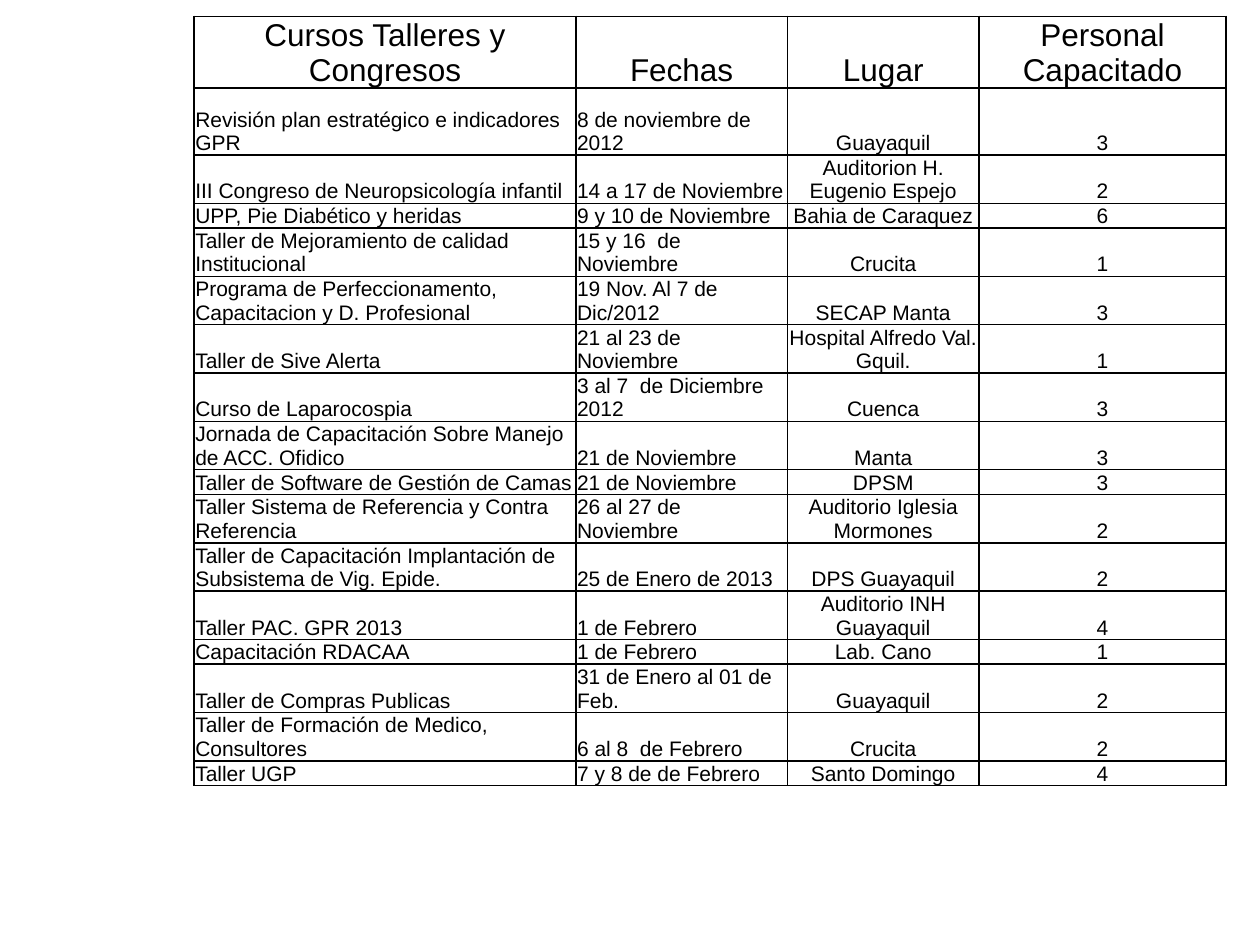
from typing import NamedTuple

from lxml import etree
from pptx import Presentation
from pptx.dml.color import RGBColor
from pptx.enum.text import MSO_ANCHOR, PP_ALIGN
from pptx.oxml.ns import qn
from pptx.util import Inches, Pt

BOTTOM = MSO_ANCHOR.BOTTOM
LEFT, CENTER = PP_ALIGN.LEFT, PP_ALIGN.CENTER
COLORS = {"ink": "000000"}
FONT = "Arial"
WIDTHS = (3.03, 1.68, 1.52, 1.96)
ALIGNS = (LEFT, LEFT, CENTER, CENTER)
HEADS = ("Cursos Talleres y Congresos", "Fechas", "Lugar", "Personal Capacitado")
HEAD_HIGH, LINE_HIGH = 0.56, 0.19


class Course(NamedTuple):
    name: str
    dates: str
    place: str
    staff: int
    high: float = 2 * LINE_HIGH


COURSES = (
    Course("Revisión plan estratégico e indicadores GPR", "8 de noviembre de 2012",
           "Guayaquil", 3, 0.53),
    Course("III Congreso de Neuropsicología infantil", "14 a 17 de Noviembre",
           "Auditorion H. Eugenio Espejo", 2),
    Course("UPP, Pie Diabético y heridas", "9 y 10 de Noviembre",
           "Bahia de Caraquez", 6, LINE_HIGH),
    Course("Taller de Mejoramiento de calidad Institucional", "15 y 16  de Noviembre",
           "Crucita", 1),
    Course("Programa de Perfeccionamento, Capacitacion y D. Profesional",
           "19 Nov. Al 7 de Dic/2012", "SECAP Manta", 3),
    Course("Taller de Sive Alerta", "21 al 23 de Noviembre",
           "Hospital Alfredo Val. Gquil.", 1),
    Course("Curso de Laparocospia", "3 al 7  de Diciembre 2012", "Cuenca", 3),
    Course("Jornada de Capacitación Sobre Manejo de ACC. Ofidico", "21 de Noviembre",
           "Manta", 3),
    Course("Taller de Software de Gestión de Camas", "21 de Noviembre",
           "DPSM", 3, LINE_HIGH),
    Course("Taller Sistema de Referencia y Contra Referencia", "26 al 27 de Noviembre",
           "Auditorio Iglesia Mormones", 2),
    Course("Taller de Capacitación Implantación de Subsistema de Vig. Epide.",
           "25 de Enero de 2013", "DPS Guayaquil", 2),
    Course("Taller PAC. GPR 2013", "1 de Febrero", "Auditorio INH Guayaquil", 4),
    Course("Capacitación RDACAA", "1 de Febrero", "Lab. Cano", 1, LINE_HIGH),
    Course("Taller de Compras Publicas", "31 de Enero al 01 de Feb.", "Guayaquil", 2),
    Course("Taller de Formación de Medico, Consultores", "6 al 8  de Febrero",
           "Crucita", 2),
    Course("Taller UGP", "7 y 8 de de Febrero", "Santo Domingo", 4, LINE_HIGH),
)


def add_borders(cell) -> None:
    props = cell._tc.get_or_add_tcPr()
    for side in ("a:lnL", "a:lnR", "a:lnT", "a:lnB"):
        line = etree.SubElement(props, qn(side), w=str(Pt(1)))
        fill = etree.SubElement(line, qn("a:solidFill"))
        etree.SubElement(fill, qn("a:srgbClr"), val=COLORS["ink"])


def fill_cell(cell, text: str, size: int, align: PP_ALIGN) -> None:
    add_borders(cell)
    cell.fill.background()
    cell.vertical_anchor = BOTTOM
    cell.margin_left = cell.margin_right = cell.margin_top = Inches(0.01)
    cell.margin_bottom = 0
    cell.text = text
    para = cell.text_frame.paragraphs[0]
    para.alignment = align
    para.font.name = FONT
    para.font.size = Pt(size)
    para.font.bold = False
    para.font.color.rgb = RGBColor.from_string(COLORS["ink"])


def add_courses(slide) -> None:
    highs = [HEAD_HIGH] + [course.high for course in COURSES]
    table = slide.shapes.add_table(
        len(highs), len(WIDTHS), Inches(1.54), Inches(0.13),
        Inches(sum(WIDTHS)), Inches(sum(highs))).table
    table.first_row = table.horz_banding = False
    for column, width in zip(table.columns, WIDTHS):
        column.width = Inches(width)
    for row, high in zip(table.rows, highs):
        row.height = Inches(high)
    for col, (head, align) in enumerate(zip(HEADS, ALIGNS)):
        fill_cell(table.cell(0, col), head, 18, CENTER)
        for row, course in enumerate(COURSES, 1):
            fill_cell(table.cell(row, col), str(course[col]), 12, align)


def main() -> None:
    deck = Presentation()
    deck.slide_width, deck.slide_height = Inches(10), Inches(7.5)
    add_courses(deck.slides.add_slide(deck.slide_layouts[6]))
    deck.save("out.pptx")


if __name__ == "__main__":
    main()
